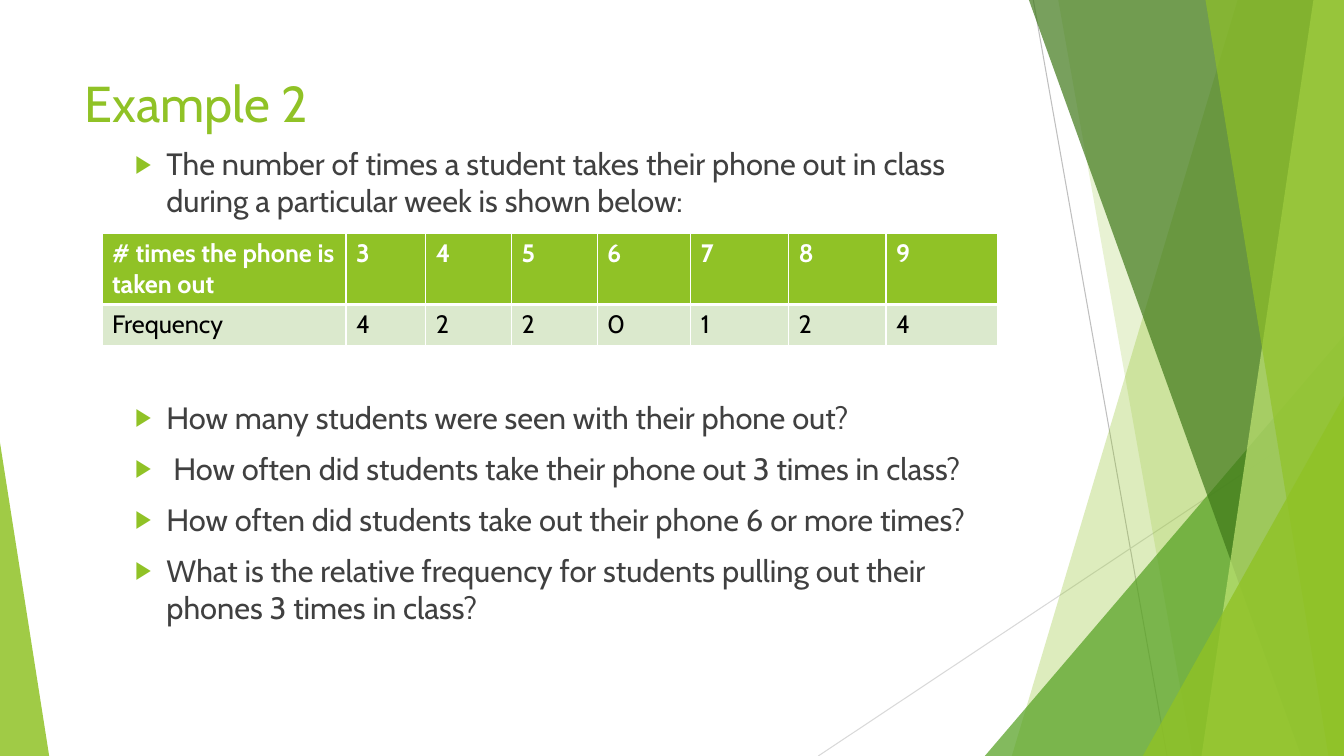
import lxml.etree
import pptx
import pptx.dml.color
import pptx.enum.shapes
import pptx.enum.text
import pptx.oxml.ns
import pptx.util

Cm, Pt = pptx.util.Cm, pptx.util.Pt
qn = pptx.oxml.ns.qn
FONT = "Cabin"
COLORS = {
    "lime": "90C226", "pale_lime": "C0E474", "green": "54A021", "forest": "3F7819",
    "grey": "BFBFBF", "light_grey": "D9D9D9", "text": "404040",
    "white": "FFFFFF", "black": "000000", "row": "DBE9CD",
}

INTRO = "The number of times a student takes their phone out in class during a particular week is shown below:"
QUESTIONS = [
    "How many students were seen with their phone out?",
    " How often did students take their phone out 3 times in class?",
    "How often did students take out their phone 6 or more times?",
    "What is the relative frequency for students pulling out their phones 3 times in class?",
]
ROWS = [
    ["# times the phone is taken out", 3, 4, 5, 6, 7, 8, 9],
    ["Frequency", 4, 2, 2, 0, 1, 2, 4],
]
COL_WIDTHS = [6.15, 2.01, 2.16, 2.16, 2.36, 2.46, 2.46, 2.82]
ROW_HEIGHTS = [1.77, 1.04]


def rgb(name):
    return pptx.dml.color.RGBColor.from_string(COLORS[name])


def sub(parent, tag, **attrs):
    return lxml.etree.SubElement(parent, qn(tag), attrs)


def set_attrs(obj, values):
    for name, value in values.items():
        setattr(obj, name, value)


def add_run(p, text, size, color, bold=False):
    r = p.add_run()
    r.text = text
    set_attrs(r.font, {"name": FONT, "size": Pt(size), "bold": bold})
    r.font.color.rgb = rgb(color)


def place(sp, box):
    set_attrs(sp, dict(zip(("left", "top", "width", "height"), map(Cm, box))))
    set_attrs(sp.text_frame, {
        "word_wrap": True,
        "auto_size": pptx.enum.text.MSO_AUTO_SIZE.NONE,
        "vertical_anchor": pptx.enum.text.MSO_ANCHOR.TOP,
    })


def paint(sp, color, opacity):
    sp.shadow.inherit = False
    sp.fill.solid()
    sp.fill.fore_color.rgb = rgb(color)
    clr = sp.element.spPr.find(qn("a:solidFill"))[0]
    sub(clr, "a:alpha", val=str(opacity * 1000))
    sp.line.fill.background()


def add_facets(s, box):
    x, y, w, h = box
    grp = s.shapes.add_group_shape()

    def line(x1, y1, x2, y2, color):
        cx = grp.shapes.add_connector(
            pptx.enum.shapes.MSO_CONNECTOR.STRAIGHT,
            Cm(x + x1), Cm(y + y1), Cm(x + x2), Cm(y + y2))
        cx.line.color.rgb = rgb(color)
        cx.line.width = Pt(0.75)
        sub(cx.element.spPr, "a:effectLst")

    def band(top_x, bottom_x, color, opacity):
        # Slanted left edge, running out to the right edge of the box
        fb = grp.shapes.build_freeform(Cm(x + top_x), Cm(y))
        fb.add_line_segments([
            (Cm(x + w), Cm(y)), (Cm(x + w), Cm(y + h)), (Cm(x + bottom_x), Cm(y + h))])
        paint(fb.convert_to_shape(), color, opacity)

    def corner(left, top, width, peak, color, opacity):
        sp = grp.shapes.add_shape(
            pptx.enum.shapes.MSO_SHAPE.ISOSCELES_TRIANGLE,
            Cm(x + left), Cm(y + top), Cm(width), Cm(h - top))
        sp.adjustments[0] = peak
        paint(sp, color, opacity)

    line(26.04, 0, 29.41, h, "grey")
    line(w, 10.24, 20.62, h, "light_grey")
    band(31.19, 25.5, "lime", 30)
    band(26.67, 30.05, "lime", 20)
    corner(24.82, 8.46, 9.05, 1.0, "green", 72)
    band(25.93, 32.79, "forest", 70)
    band(33.1, 30.28, "pale_lime", 70)
    band(30.38, 33.48, "lime", 65)
    corner(28.8, 9.98, 5.07, 1.0, "lime", 80)
    corner(0, 11.15, 1.24, 0.0, "lime", 85)
    # Keep the decoration behind the text
    s.shapes.title.element.addprevious(grp.element)


def add_title(s, box):
    sp = s.shapes.title
    place(sp, box)
    p = sp.text_frame.paragraphs[0]
    p.alignment = pptx.enum.text.PP_ALIGN.LEFT
    add_run(p, "Example 2", 36, "lime")


def add_body(s, box):
    sp = s.placeholders[1]
    place(sp, box)
    tf = sp.text_frame
    for i, text in enumerate([INTRO] + QUESTIONS):
        p = tf.add_paragraph() if i else tf.paragraphs[0]
        # The first question leaves room for the table
        set_attrs(p, {"level": 1, "space_before": Pt(128.5 if i == 1 else 10)})
        add_run(p, text, 22, "text")
        pPr = p._p.get_or_add_pPr()
        pPr.set("marL", str(Cm(2.06)))
        pPr.set("indent", str(Cm(-0.79)))
        sub(sub(pPr, "a:buClr"), "a:srgbClr", val=COLORS["lime"])
        sub(pPr, "a:buSzPct", val="80000")
        sub(pPr, "a:buChar", char="▶")


def add_borders(cell, bottom):
    tcPr = cell._tc.get_or_add_tcPr()
    for side, width in (("L", 1), ("R", 1), ("T", 1), ("B", bottom)):
        ln = sub(tcPr, "a:ln" + side, w=str(Pt(width)))
        sub(sub(ln, "a:solidFill"), "a:srgbClr", val=COLORS["white"])


def add_frequency_table(s, box):
    x, y, w, h = map(Cm, box)
    tbl = s.shapes.add_table(len(ROWS), len(COL_WIDTHS), x, y, w, h).table
    for col, width in zip(tbl.columns, COL_WIDTHS):
        col.width = Cm(width)
    styles = [("lime", "white", True, 3), ("row", "black", False, 1)]
    for i, (fill, color, bold, bottom) in enumerate(styles):
        tbl.rows[i].height = Cm(ROW_HEIGHTS[i])
        for j, value in enumerate(ROWS[i]):
            cell = tbl.cell(i, j)
            add_borders(cell, bottom)
            cell.fill.solid()
            cell.fill.fore_color.rgb = rgb(fill)
            add_run(cell.text_frame.paragraphs[0], str(value), 18, color, bold)


def main():
    prs = pptx.Presentation()
    set_attrs(prs, {"slide_width": Cm(33.87), "slide_height": Cm(19.05)})
    s = prs.slides.add_slide(prs.slide_layouts[1])
    add_facets(s, (0, 0, 33.87, 19.05))
    add_title(s, (1.88, 1.7, 23.88, 3.66))
    add_body(s, (1.88, 3.53, 23.88, 10.77))
    add_frequency_table(s, (2.57, 5.87, sum(COL_WIDTHS), sum(ROW_HEIGHTS)))
    prs.save("out.pptx")


if __name__ == "__main__":
    main()
